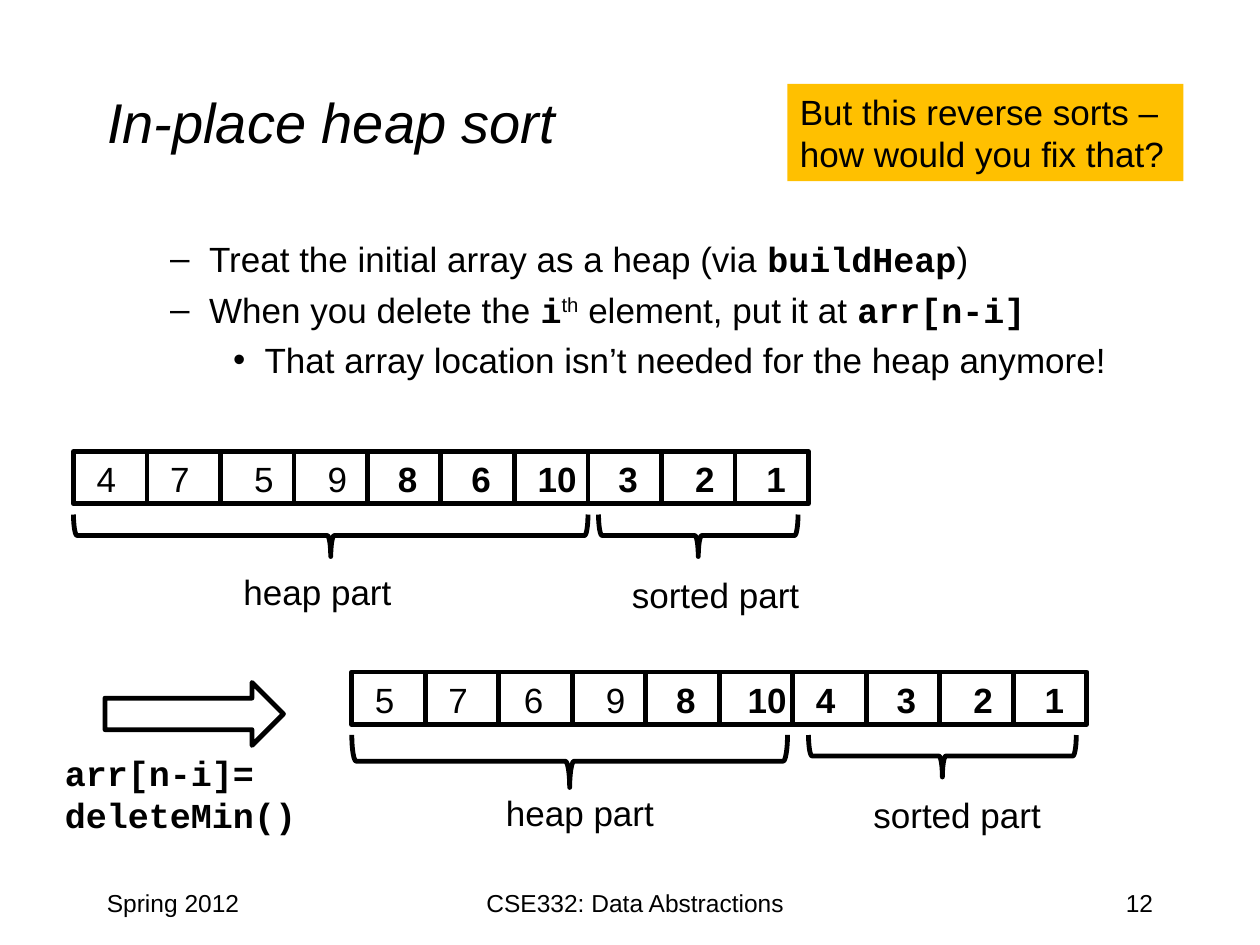
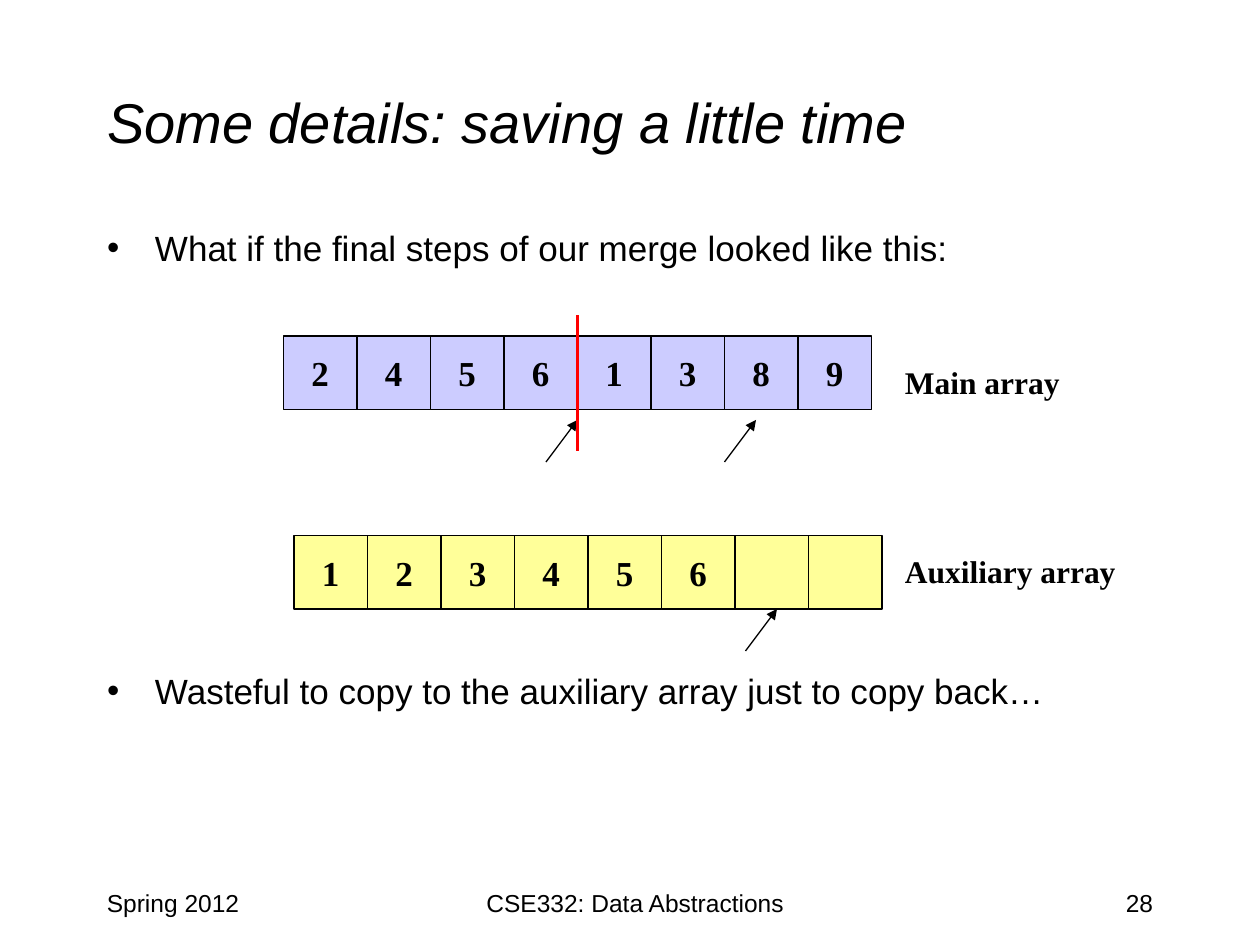
from pptx import Presentation, util as u
from pptx.dml.color import RGBColor
from pptx.enum import shapes as es, text as et
from pptx.oxml.ns import qn
from lxml import etree

BLACK = RGBColor(0x00, 0x00, 0x00)
RED = RGBColor(0xFF, 0x00, 0x00)
GOLD = RGBColor(0xFF, 0xC0, 0x00)
LILAC = RGBColor(0xCC, 0xCC, 0xFF)
YELLOW = RGBColor(0xFF, 0xFF, 0x99)
SANS, CODE, SERIF = "Arial", "Courier New", "Times New Roman"
LEFT, MID, RIGHT = et.PP_ALIGN.LEFT, et.PP_ALIGN.CENTER, et.PP_ALIGN.RIGHT
KIND = es.MSO_SHAPE

# The slide is a grid of 120 columns by 90 rows
COLS, ROWS = 120, 90
UNIT = u.Inches(10) // COLS
CELL = 7  # width of an array cell
THICK, THIN = 2.75, 0.75

# Bullet sign, left margin and hanging indent (inches) for each level
BULLETS = [("•", 0.38, -0.38), ("–", 0.81, -0.31), ("•", 1.25, -0.25)]


def grid(*vals):
    return [round(v * UNIT) for v in vals]


def put(para, words, size=20, font=SANS, bold=False, tilt=False, lift=0):
    """Add one formatted run."""
    run = para.add_run()
    run.text = words
    face = run.font
    face.size, face.name = u.Pt(size), font
    face.bold, face.italic = bold, tilt
    face.color.rgb = BLACK
    if lift:
        run._r.get_or_add_rPr().set("baseline", str(lift * 1000))


def fill(frame, lines, align=LEFT, **style):
    """Write one paragraph for each line."""
    for i, line in enumerate(lines):
        para = frame.add_paragraph() if i else frame.paragraphs[0]
        para.alignment = align
        put(para, line, **style)


def label(slide, box, lines, wrap=True, **style):
    frame = slide.shapes.add_textbox(*grid(*box)).text_frame
    frame.word_wrap = wrap
    fill(frame, lines, **style)


def form(slide, kind, box, color=None, width=None):
    """Add a preset shape without shadow."""
    shape = slide.shapes.add_shape(kind, *grid(*box))
    shape.shadow.inherit = False
    if color is None:
        shape.fill.background()
    else:
        shape.fill.solid()
        shape.fill.fore_color.rgb = color
    if width is None:
        shape.line.fill.background()
    else:
        shape.line.color.rgb = BLACK
        shape.line.width = u.Pt(width)
    frame = shape.text_frame
    frame.word_wrap = False
    frame.vertical_anchor = et.MSO_ANCHOR.TOP
    return shape


def rule(slide, ends, color, width, head=False):
    line = slide.shapes.add_connector(es.MSO_CONNECTOR.STRAIGHT, *grid(*ends))
    line.line.color.rgb = color
    line.line.width = u.Pt(width)
    if head:
        tip = etree.SubElement(line.line._get_or_add_ln(), qn("a:tailEnd"))
        tip.set("type", "triangle")
    etree.SubElement(line._element.spPr, qn("a:effectLst"))


def hold(slide, index, box):
    """Move a template placeholder and return its text frame."""
    shape = slide.placeholders[index]
    shape.left, shape.top, shape.width, shape.height = grid(*box)
    frame = shape.text_frame
    frame.word_wrap = True
    frame.auto_size = et.MSO_AUTO_SIZE.NONE
    return frame


def base(deck, title, number):
    """Slide with the shared title and footer."""
    slide = deck.slides.add_slide(deck.slide_layouts[1])
    frame = hold(slide, 0, (9, 4, 102, 15))
    frame.vertical_anchor = et.MSO_ANCHOR.MIDDLE
    fill(frame, [title], size=32, tilt=True)
    for x, wide, words, align in [(9, 25, "Spring 2012", LEFT),
                                  (86, 25, number, RIGHT),
                                  (38, 45, "CSE332: Data Abstractions", MID)]:
        label(slide, (x, 84, wide, 6), [words], align=align, size=14)
    return slide


def points(slide, box, items):
    """Bulleted list of (level, space before, runs)."""
    frame = hold(slide, 1, box)
    for i, (level, gap, runs) in enumerate(items):
        para = frame.add_paragraph() if i else frame.paragraphs[0]
        para.level = level
        para.space_before = u.Pt(gap)
        sign, left, hang = BULLETS[level]
        props = para._p.get_or_add_pPr()
        props.set("marL", str(u.Inches(left)))
        props.set("indent", str(u.Inches(hang)))
        etree.SubElement(props, qn("a:buChar")).set("char", sign)
        for words, style in runs:
            put(para, words, **style)


# Heap sort slide

def brace(slide, x, y, wide, high):
    """Brace opening upward: a right brace turned by a quarter."""
    box = (x + (wide - high) / 2, y + (high - wide) / 2, high, wide)
    form(slide, KIND.RIGHT_BRACE, box, width=THICK).rotation = 90


def strip(slide, x, y, cells, plain):
    """Array whose first cells are plain and the rest bold."""
    for i, (words, nudge) in enumerate(cells):
        box = (x + i * CELL, y, CELL, 5)
        frame = form(slide, KIND.RECTANGLE, box, width=THICK).text_frame
        frame.word_wrap = True
        frame.margin_left = grid(1.2 + nudge)[0]
        frame.margin_right = 0
        fill(frame, [words], bold=i >= plain)


def parts(slide, x, y, heap, rest):
    """Braces and names; each is (start, width, height, name start)."""
    for name, wide, drop, (start, span, high, text) in [
            ("heap part", 16.7, 10.75, heap),
            ("sorted part", 18.5, 11, rest)]:
        brace(slide, x + start, y + 6, span, high)
        label(slide, (x + text, y + drop, wide, 5.3), [name], wrap=False)


def step(slide, x, y):
    """Arrow with the call below it."""
    form(slide, KIND.RIGHT_ARROW, (x + 5, y, 17, 6), width=THICK)
    label(slide, (x, y + 6, 25, 9.25), ["arr[n-i]=", "deleteMin()"],
          font=CODE, bold=True)


def heaps(deck):
    slide = base(deck, "In-place heap sort", "12")
    code = dict(font=CODE, bold=True)
    points(slide, (9, 22, 102, 16), [
        (1, 2, [("Treat the initial array as a heap (via ", {}),
                ("buildHeap", code), (")", {})]),
        (1, 5, [("When you delete the ", {}), ("i", code),
                ("th", dict(lift=30)), (" element, put it at ", {}),
                ("arr[n-i]", code)]),
        (2, 5, [("That array location isn’t needed for the heap anymore!",
                 {})]),
    ])
    tail = [("3", 1.7), ("2", 2), ("1", 1.8)]
    # Before the step
    strip(slide, 7, 43, [("4", 1), ("7", 1), ("5", 2), ("9", 2), ("8", 1.7),
                         ("6", 1.7), ("10", 1)] + tail, 4)
    parts(slide, 7, 43, (0, 49, 4, 15), (50, 19, 4, 52))
    # After the step
    step(slide, 5, 65)
    strip(slide, 33.5, 64, [("5", 1), ("7", 1), ("6", 1.2), ("9", 2),
                            ("8", 1.7), ("10", 1.5), ("4", 1)] + tail, 4)
    parts(slide, 33.5, 64, (0, 41.5, 5, 13.5), (43.5, 25.5, 4, 48.5))
    # Question
    note = form(slide, KIND.RECTANGLE, (75, 8, 37.7, 9.25), GOLD)
    fill(note.text_frame,
         ["But this reverse sorts –", "how would you fix that?"])


# Merge slide

def array(slide, x, y, cells, color, marks):
    """Filled array with arrows that point at its lower side."""
    for i, words in enumerate(cells):
        box = (x + i * CELL, y, CELL, CELL)
        frame = form(slide, KIND.RECTANGLE, box, color, THIN).text_frame
        frame.vertical_anchor = et.MSO_ANCHOR.MIDDLE
        if words:
            fill(frame, [words], align=MID, font=SERIF, bold=True)
    for left, top in marks:
        tip = (x + left, y + top)
        rule(slide, (tip[0] - 3, tip[1] + 4, *tip), BLACK, THIN, head=True)


def merge(deck):
    slide = base(deck, "Some details: saving a little time", "28")
    points(slide, (9, 21, 102, 59), [
        (0, 2, [("What if the final steps of our merge looked like this:",
                 {})]),
        (0, 229, [("Wasteful to copy to the auxiliary array just to copy "
                   "back…", {})]),
    ])
    array(slide, 27, 32, "24561389", LILAC, [(28, 8), (45, 8)])
    rule(slide, (55, 30, 55, 43), RED, 2.25)
    array(slide, 28, 51, [*"123456", "", ""], YELLOW, [(46, 7)])
    for y, name in [(34, "Main array"), (52, "Auxiliary array")]:
        label(slide, (85, y, 30, 5), [name], size=18, font=SERIF, bold=True)


def main():
    deck = Presentation()
    deck.slide_width, deck.slide_height = grid(COLS, ROWS)
    heaps(deck)
    merge(deck)
    deck.save("out.pptx")


if __name__ == "__main__":
    main()
